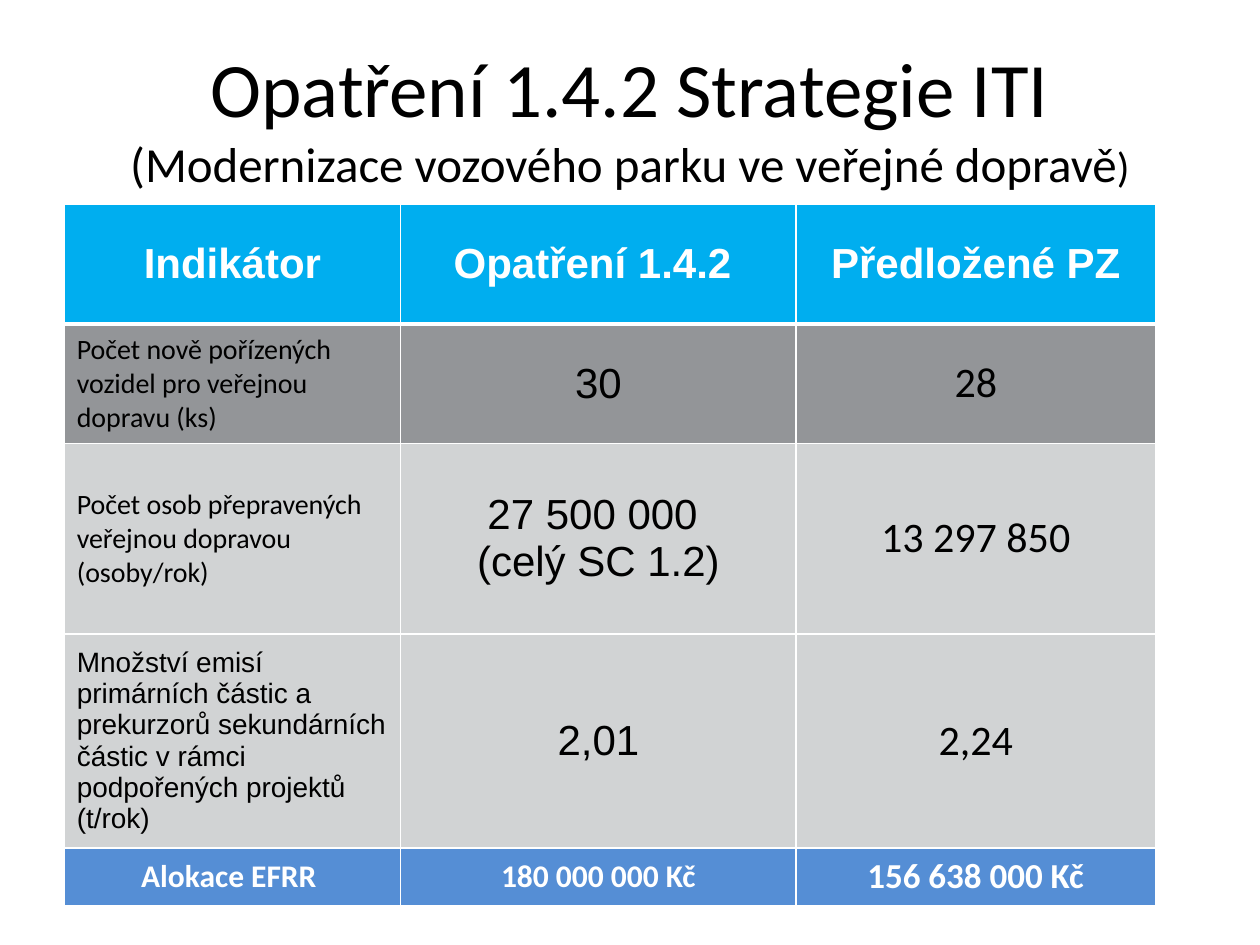
from lxml import etree
from pptx import Presentation
from pptx.dml.color import RGBColor
from pptx.enum.text import MSO_ANCHOR, PP_ALIGN
from pptx.oxml.ns import qn
from pptx.util import Inches, Pt

MIDDLE = MSO_ANCHOR.MIDDLE
LEFT, CENTER = PP_ALIGN.LEFT, PP_ALIGN.CENTER
BLACK, WHITE = "000000", "FFFFFF"
CYAN, GRAY, SILVER, BLUE = "00AEEF", "939598", "D1D3D4", "558ED5"
BORDER_TAGS = ("a:lnL", "a:lnR", "a:lnT", "a:lnB")

COLUMN_WIDTHS = (2.67, 3.14, 2.85)
ROW_HEIGHTS = (0.95, 0.95, 1.51, 1.51, 0.46)
ROW_FILLS = (CYAN, GRAY, SILVER, SILVER, BLUE)
ROWS = (
    ("Indikátor", "Opatření 1.4.2 ", "Předložené PZ"),
    ("Počet nově pořízených vozidel pro veřejnou dopravu (ks)", "30", "28"),
    ("Počet osob přepravených veřejnou dopravou (osoby/rok)",
     "27 500 000 \n(celý SC 1.2)", "13 297 850"),
    ("Množství emisí primárních částic a prekurzorů sekundárních částic "
     "v rámci podpořených projektů (t/rok)", "2,01", "2,24"),
    ("Alokace EFRR ", "180 000 000 Kč", "156 638 000 Kč"),
)
HEADER, EMISSIONS, TOTAL = 0, 3, len(ROWS) - 1


def color(value):
    return RGBColor.from_string(value)


def add_span(para, text, size, font="Calibri", ink=BLACK, bold=False):
    span = para.add_run()
    span.text = text
    span.font.name = font
    span.font.size = Pt(size)
    span.font.bold = bold
    span.font.color.rgb = color(ink)


def add_title(page, left, top, width, height):
    box = page.shapes.add_textbox(left, top, width, height)
    frame = box.text_frame
    frame.word_wrap = True
    frame.vertical_anchor = MIDDLE
    para = frame.paragraphs[0]
    para.alignment = CENTER
    add_span(para, "Opatření 1.4.2 Strategie ITI", 44)
    para.add_line_break()
    add_span(para, "(Modernizace vozového parku ve veřejné dopravě", 28)
    add_span(para, ")", 24)


def set_borders(cell, bottom_width):
    """Draw white edges; they must come before the fill in the cell XML."""
    properties = cell._tc.get_or_add_tcPr()
    for position, tag in enumerate(BORDER_TAGS):
        width = bottom_width if tag == "a:lnB" else 1
        line = etree.Element(qn(tag), w=str(Pt(width)))
        fill = etree.SubElement(line, qn("a:solidFill"))
        etree.SubElement(fill, qn("a:srgbClr"), val=WHITE)
        properties.insert(position, line)


def text_style(row, column):
    """Return size, font, ink and bold for a cell."""
    if row == HEADER:
        return 24, "Arial", WHITE, True
    if row == TOTAL:
        return (20 if column == 2 else 18), "Calibri", WHITE, True
    if column == 0:
        return 16, ("Arial" if row == EMISSIONS else "Calibri"), BLACK, False
    return 24, ("Arial" if column == 1 else "Calibri"), BLACK, False


def fill_cell(cell, row, column):
    is_body = HEADER < row < TOTAL
    cell.fill.solid()
    cell.fill.fore_color.rgb = color(ROW_FILLS[row])
    cell.vertical_anchor = MIDDLE
    if is_body and column == 2:
        cell.margin_left = cell.margin_right = 0
        cell.margin_top = cell.margin_bottom = 0
    set_borders(cell, 3 if row == HEADER else 1)
    frame = cell.text_frame
    for index, text in enumerate(ROWS[row][column].split("\n")):
        para = frame.add_paragraph() if index else frame.paragraphs[0]
        para.alignment = LEFT if is_body and column == 0 else CENTER
        add_span(para, text, *text_style(row, column))


def add_indicator_table(page, left, top, width, height):
    table = page.shapes.add_table(
        len(ROWS), len(COLUMN_WIDTHS), left, top, width, height).table
    for column, column_width in zip(table.columns, COLUMN_WIDTHS):
        column.width = Inches(column_width)
    for row, row_height in zip(table.rows, ROW_HEIGHTS):
        row.height = Inches(row_height)
    for row in range(len(ROWS)):
        for column in range(len(COLUMN_WIDTHS)):
            fill_cell(table.cell(row, column), row, column)


def main():
    deck = Presentation()
    deck.slide_width, deck.slide_height = Inches(10), Inches(7.5)
    page = deck.slides.add_slide(deck.slide_layouts[6])
    add_title(page, Inches(0.5), Inches(0.3), Inches(9), Inches(1.25))
    add_indicator_table(page, Inches(0.51), Inches(1.62),
                        Inches(sum(COLUMN_WIDTHS)), Inches(sum(ROW_HEIGHTS)))
    deck.save("out.pptx")


if __name__ == "__main__":
    main()
